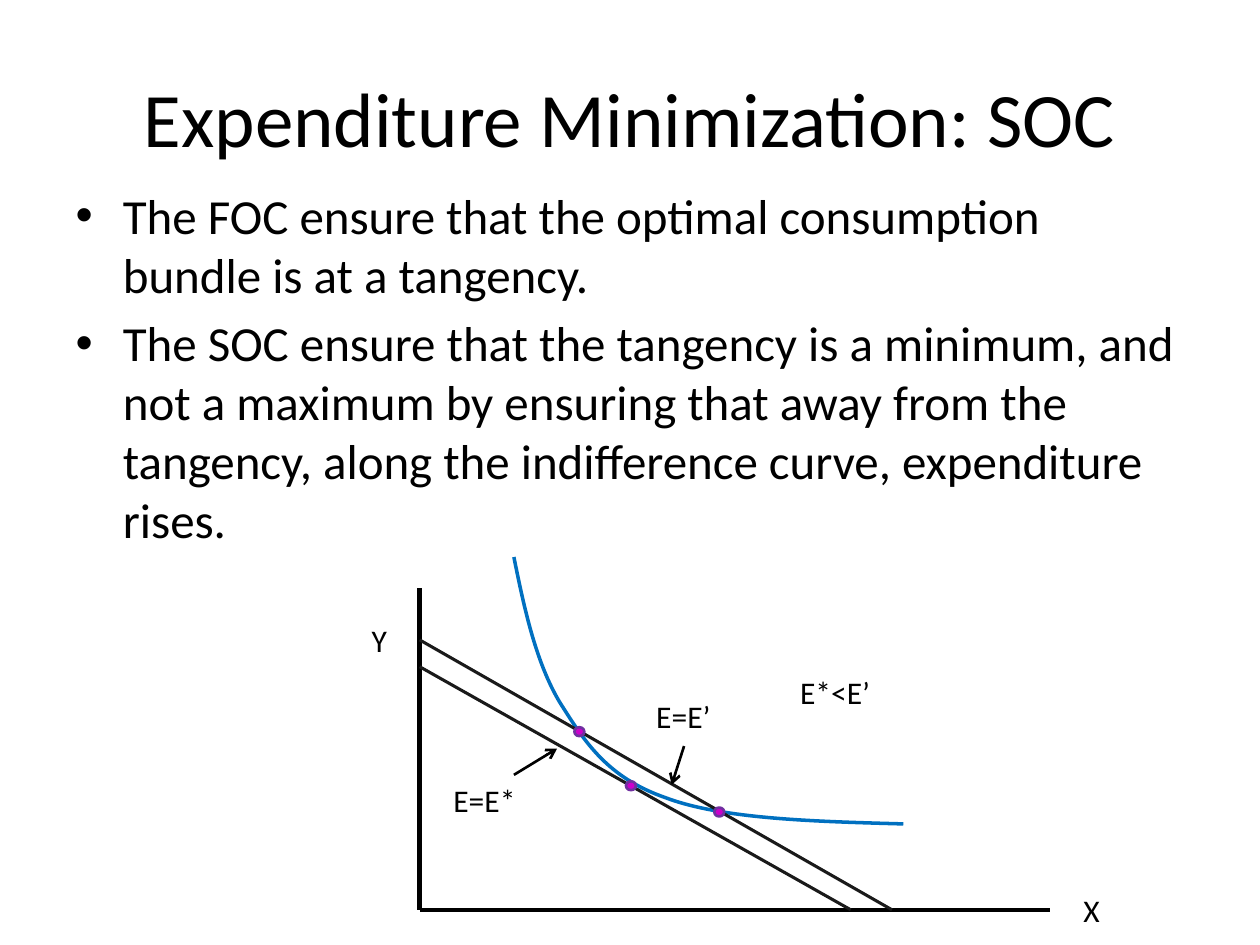
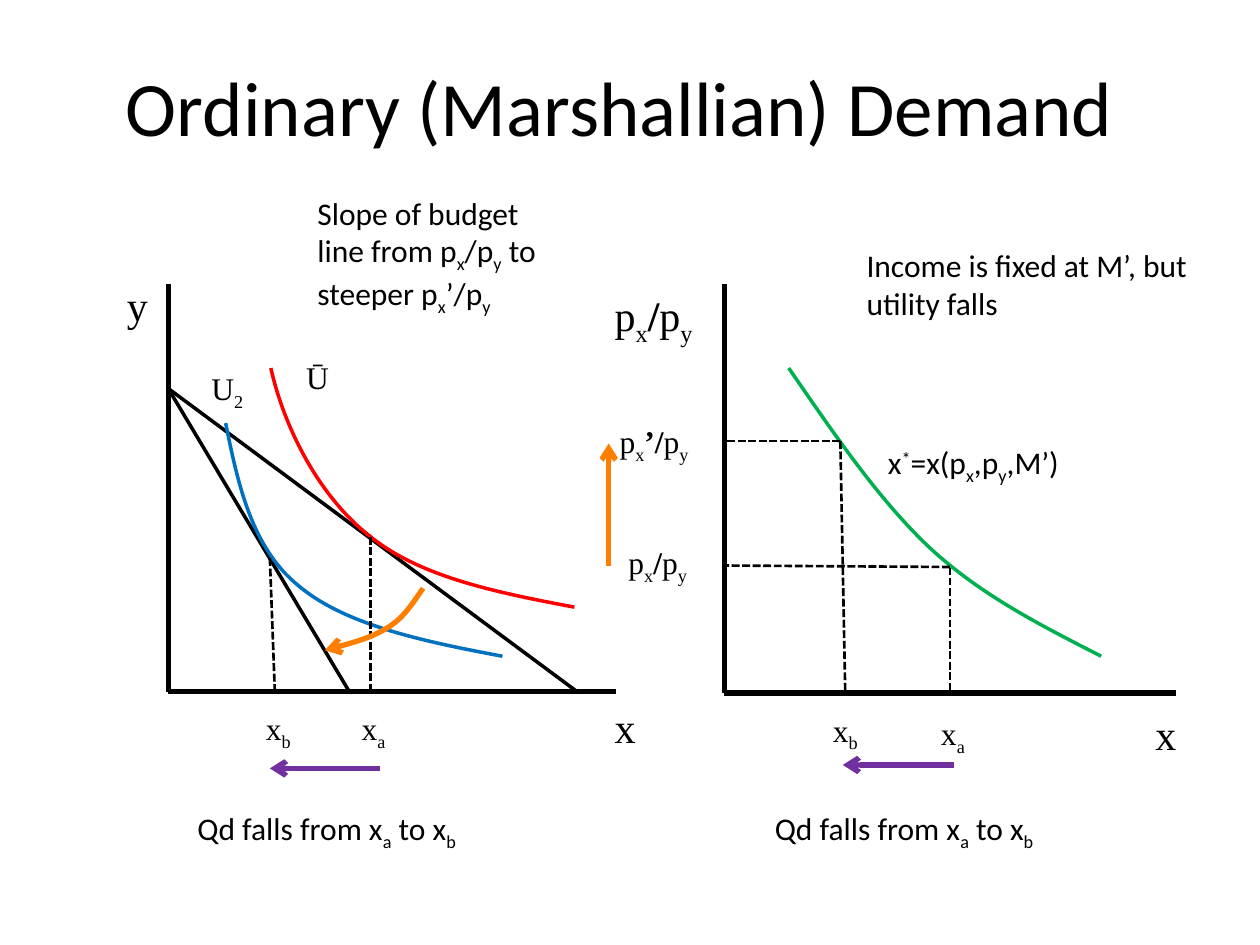
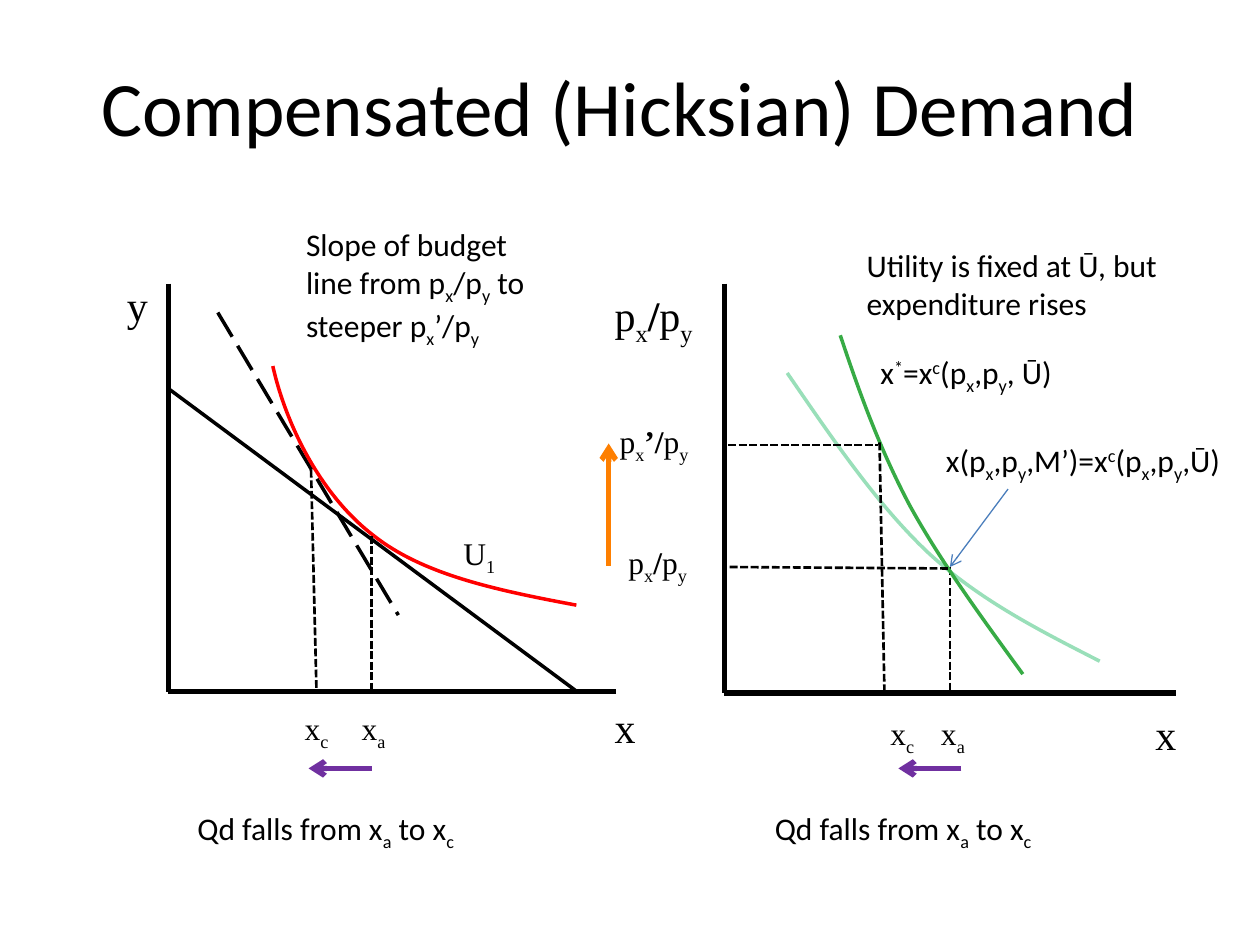
"""Build three slides on expenditure minimization and consumer demand."""
from dataclasses import dataclass, replace
from itertools import groupby

from lxml.etree import SubElement
from pptx import Presentation
from pptx.dml.color import RGBColor
from pptx.enum.dml import MSO_LINE
from pptx.enum.shapes import MSO_CONNECTOR, MSO_SHAPE
from pptx.enum.text import MSO_AUTO_SIZE, PP_ALIGN
from pptx.oxml.ns import qn
from pptx.util import Cm, Pt

BLACK = RGBColor(0x00, 0x00, 0x00)
CHARCOAL = RGBColor(0x1A, 0x1A, 0x1A)
BLUE = RGBColor(0x00, 0x70, 0xC0)
STEEL = RGBColor(0x4B, 0x7E, 0xBC)
RED = RGBColor(0xFF, 0x00, 0x00)
GREEN = RGBColor(0x00, 0xB0, 0x50)
LEAF = RGBColor(0x37, 0xAB, 0x45)
ORANGE = RGBColor(0xFE, 0x7F, 0x00)
PURPLE = RGBColor(0x70, 0x30, 0xA0)
MAGENTA = RGBColor(0xCC, 0x00, 0xCC)

SANS = "Calibri"
SERIF = "Times New Roman"
MARKS = "_^~"
BASELINES = {"_": "-25000", "^": "30000"}

Point = tuple[float, float]
Box = tuple[float, float, float, float]


@dataclass(frozen=True)
class Stroke:
    """Look of a line; opacity is a percentage."""
    color: RGBColor
    width: float
    dash: MSO_LINE | None = None
    arrow: bool = False
    opacity: int = 100


@dataclass(frozen=True)
class Line:
    """Straight line between two points in centimetres."""
    start: Point
    end: Point
    stroke: Stroke


@dataclass(frozen=True)
class Curve:
    """Chain of cubic Bézier segments in centimetres."""
    points: tuple[Point, ...]
    stroke: Stroke

    def shifted(self, right: float, down: float) -> "Curve":
        """Return the same curve moved by the given distances."""
        return replace(self, points=tuple((x + right, y + down) for x, y in self.points))


@dataclass(frozen=True)
class Label:
    """Text in which _, ^ and ~ lower, raise or embolden the next character."""
    text: str
    left: float
    top: float
    width: float
    height: float = 1.02
    font: str = SANS
    size: int = 18
    wrap: bool = False


AXIS = Stroke(BLACK, 3)
SMALL_AXIS = Stroke(BLACK, 2.5)
BUDGET = Stroke(BLACK, 2)
EXPENDITURE = Stroke(CHARCOAL, 1.75)
GUIDE = Stroke(BLACK, 1.5, MSO_LINE.SQUARE_DOT)
POINTER = Stroke(BLACK, 1.5, arrow=True)
PRICE_CHANGE = Stroke(ORANGE, 3, arrow=True)
QUANTITY_CHANGE = Stroke(PURPLE, 3, arrow=True)

FIXED_UTILITY = Curve(
    ((5.46, 7.42), (5.74, 8.66), (6.45, 10.03), (7.47, 10.82),
     (8.48, 11.63), (9.98, 11.94), (11.58, 12.24)), Stroke(RED, 2))
ORDINARY_DEMAND = Curve(
    ((15.9, 7.42), (16.81, 8.74), (17.7, 10.06), (18.75, 11.05),
     (19.79, 12.01), (21.01, 12.62), (22.2, 13.23)), Stroke(GREEN, 2))


def symbol(text: str, left: float, top: float, width: float = 1.02) -> Label:
    """Return a small serif label."""
    return Label(text, left, top, width, font=SERIF)


def axis_name(text: str, left: float, top: float, width: float, wrap: bool = True) -> Label:
    """Return a large serif label."""
    return Label(text, left, top, width, 1.27, SERIF, 24, wrap)


def slope_note(left: float, top: float) -> Label:
    """Return the note on the slope of the budget line."""
    return Label("Slope of budget line from p_x/p_y to steeper p_x’/p_y",
                 left, top, 5.64, 2.57, wrap=True)


def quantity_notes(target: str) -> list[Label]:
    """Return the note on demanded quantity for both diagrams."""
    return [Label(f"Qd falls from x_a to x_{target}", left, 16.18, 6.73, wrap=True)
            for left in (3.73, 15.37)]


DEMAND_FRAME = [
    Line((3.39, 5.72), (3.39, 13.94), AXIS),
    Line((12.42, 13.94), (3.39, 13.94), AXIS),
    Line((14.6, 5.72), (14.6, 13.97), AXIS),
    Line((23.7, 13.97), (14.6, 13.97), AXIS),
    Line((3.39, 7.83), (11.63, 13.94), BUDGET),
    Line((19.15, 11.43), (19.15, 13.97), GUIDE),
    Line((12.27, 11.4), (12.27, 8.94), PRICE_CHANGE),
    axis_name("y", 2.31, 5.51, 0.94, wrap=False),
    axis_name("x", 12.14, 14.02, 0.76),
    axis_name("x", 23.04, 14.15, 0.97),
    axis_name("p_x~/p_y", 12.14, 5.72, 2.46),
    replace(symbol("p_x~/p_y", 12.42, 10.82, 1.93), wrap=True),
    replace(symbol("p_x~’~/p_y", 12.24, 8.38, 2.11), wrap=True),
    symbol("x_a", 7.04, 14.17),
    symbol("x_a", 18.72, 14.27),
]

MINIMIZATION = [
    Line((8.46, 11.86), (8.46, 18.34), SMALL_AXIS),
    Line((8.46, 18.34), (21.16, 18.34), SMALL_AXIS),
    Line((8.46, 13.44), (17.15, 18.34), EXPENDITURE),
    Curve(((10.36, 11.23), (10.57, 12.27), (10.8, 13.34), (11.28, 14.15),
           (11.79, 14.96), (12.24, 15.67), (13.41, 16.08),
           (14.55, 16.51), (16.38, 16.56), (18.21, 16.61)), Stroke(BLUE, 2)),
    Line((8.46, 12.9), (17.98, 18.34), EXPENDITURE),
    Line((10.36, 15.62), (11.23, 15.09), POINTER),
    Line((13.79, 15.04), (13.54, 15.82), POINTER),
    Label("X", 21.59, 17.83, 0.89, wrap=True),
    Label("Y", 7.24, 12.4, 0.89, wrap=True),
    Label("E=E*", 8.89, 15.62, 1.78),
    Label("E=E’", 12.98, 13.92, 1.63),
    Label("E*<E’", 15.88, 13.44, 1.93),
]
CROSSINGS = [(11.58, 14.66), (12.62, 15.75), (14.4, 16.28)]

MARSHALLIAN = [
    Line((3.39, 7.83), (7.04, 13.94), BUDGET),
    Curve(((4.55, 8.53), (4.8, 9.78), (5.08, 11.05), (6.02, 11.81),
           (6.96, 12.6), (8.53, 12.93), (10.13, 13.23)), Stroke(BLUE, 2)),
    FIXED_UTILITY,
    ORDINARY_DEMAND,
    Line((7.47, 10.82), (7.47, 13.92), GUIDE),
    Line((5.44, 11.25), (5.54, 13.94), GUIDE),
    Line((16.94, 8.89), (17.04, 14.02), GUIDE),
    Line((16.94, 8.89), (14.6, 8.89), GUIDE),
    Line((19.15, 11.43), (14.6, 11.4), GUIDE),
    Curve(((8.53, 11.86), (8.33, 12.14), (8.15, 12.45), (7.82, 12.65),
           (7.49, 12.85), (7.04, 12.98), (6.55, 13.11)), PRICE_CHANGE),
    Line((19.23, 15.42), (16.99, 15.42), QUANTITY_CHANGE),
    Line((7.67, 15.49), (5.44, 15.49), QUANTITY_CHANGE),
    symbol("x_b", 5.11, 14.17),
    symbol("x_b", 16.54, 14.2),
    symbol("Ū", 5.92, 7.09, 0.97),
    symbol("U_2", 4.01, 7.32, 1.19),
    Label("x^*=x(p_x,p_y,M’)", 17.65, 8.81, 4.04),
    slope_note(6.15, 3.78),
    Label("Income is fixed at M’, but\nutility falls", 17.22, 4.83, 7.42, 1.8),
    *quantity_notes("b"),
]

HICKSIAN = [
    Line((4.39, 6.3), (8.03, 12.4), replace(BUDGET, dash=MSO_LINE.LONG_DASH)),
    FIXED_UTILITY.shifted(0.04, -0.04),
    replace(ORDINARY_DEMAND.shifted(-0.03, 0.1), stroke=Stroke(GREEN, 2, opacity=40)),
    Curve(((16.94, 6.76), (17.32, 7.9), (17.73, 9.04), (18.34, 10.19),
           (18.95, 11.3), (19.79, 12.45), (20.62, 13.59)), Stroke(LEAF, 2)),
    Line((7.49, 10.8), (7.49, 13.89), GUIDE),
    Line((6.27, 9.47), (6.38, 13.94), GUIDE),
    Line((17.73, 8.92), (17.83, 13.94), GUIDE),
    Line((14.68, 8.97), (17.7, 8.97), GUIDE),
    Line((14.71, 11.43), (19.15, 11.46), GUIDE),
    Line((7.49, 15.49), (6.22, 15.49), QUANTITY_CHANGE),
    Line((19.38, 15.49), (18.11, 15.49), QUANTITY_CHANGE),
    Line((20.32, 9.86), (19.15, 11.43), Stroke(STEEL, 0.75, arrow=True)),
    symbol("x_c", 5.89, 14.17),
    symbol("x_c", 17.7, 14.27),
    symbol("U_1", 9.09, 10.64, 1.19),
    Label("x^*=x^c(p_x,p_y, Ū)", 17.5, 6.99, 4.11),
    Label("x(p_x,p_y,M’)=x^c(p_x,p_y,Ū)", 18.82, 8.76, 6.1, 1.8),
    slope_note(5.92, 4.42),
    Label("Utility is fixed at Ū, but\nexpenditure rises", 17.22, 4.83, 6.45, 1.8),
    *quantity_notes("c"),
]


def apply_stroke(shape, stroke: Stroke) -> None:
    """Give the outline of a shape or connector the stroke's look."""
    shape.line.color.rgb = stroke.color
    shape.line.width = Pt(stroke.width)
    if stroke.dash is not None:
        shape.line.dash_style = stroke.dash
    outline = shape._element.spPr.find(qn("a:ln"))
    if stroke.opacity < 100:
        color = outline.find(".//" + qn("a:srgbClr"))
        SubElement(color, qn("a:alpha"), val=str(stroke.opacity * 1000))
    if stroke.arrow:
        SubElement(outline, qn("a:tailEnd"), type="arrow")


def draw_line(slide, line: Line) -> None:
    """Draw a straight connector without a shadow."""
    ends = [Cm(value) for value in line.start + line.end]
    connector = slide.shapes.add_connector(MSO_CONNECTOR.STRAIGHT, *ends)
    apply_stroke(connector, line.stroke)
    SubElement(connector._element.spPr, qn("a:effectLst"))


def draw_curve(slide, curve: Curve) -> None:
    """Draw a freeform and join each three of its segments into a Bézier."""
    start, *others = [(Cm(x), Cm(y)) for x, y in curve.points]
    builder = slide.shapes.build_freeform(*start)
    builder.add_line_segments(others, close=False)
    shape = builder.convert_to_shape()
    shape.fill.background()
    shape.shadow.inherit = False
    apply_stroke(shape, curve.stroke)
    outline = shape._element.find(".//" + qn("a:path"))
    segments = outline.findall(qn("a:lnTo"))
    for first in range(0, len(segments), 3):
        bezier = SubElement(outline, qn("a:cubicBezTo"))
        for segment in segments[first:first + 3]:
            bezier.append(segment[0])
            outline.remove(segment)


def split_marks(text: str) -> list[tuple[str, str]]:
    """Pair every visible character with the mark before it."""
    pairs, mark = [], ""
    for character in text:
        if character in MARKS:
            mark = character
        else:
            pairs.append((mark, character))
            mark = ""
    return pairs


def draw_label(slide, label: Label) -> None:
    """Draw a text box with lowered, raised and bold characters."""
    box = slide.shapes.add_textbox(
        Cm(label.left), Cm(label.top), Cm(label.width), Cm(label.height))
    frame = box.text_frame
    frame.word_wrap = label.wrap
    frame.auto_size = MSO_AUTO_SIZE.SHAPE_TO_FIT_TEXT
    for number, text in enumerate(label.text.split("\n")):
        paragraph = frame.add_paragraph() if number else frame.paragraphs[0]
        paragraph.font.name = label.font
        paragraph.font.size = Pt(label.size)
        paragraph.font.color.rgb = BLACK
        for mark, pairs in groupby(split_marks(text), key=lambda pair: pair[0]):
            run = paragraph.add_run()
            run.text = "".join(character for _, character in pairs)
            if mark in BASELINES:
                run._r.get_or_add_rPr().set("baseline", BASELINES[mark])
            elif mark == "~":
                run.font.bold = True


def draw_crossing(slide, corner: Point) -> None:
    """Draw a dot where an expenditure line meets the curve."""
    dot = slide.shapes.add_shape(
        MSO_SHAPE.OVAL, Cm(corner[0]), Cm(corner[1]), Cm(0.2), Cm(0.18))
    dot.shadow.inherit = False
    dot.fill.solid()
    dot.fill.fore_color.rgb = MAGENTA
    apply_stroke(dot, Stroke(PURPLE, 1.5))


def draw_diagram(slide, elements: list[Line | Curve | Label]) -> None:
    """Draw every element with the function for its type."""
    painters = {Line: draw_line, Curve: draw_curve, Label: draw_label}
    for element in elements:
        painters[type(element)](slide, element)


def fill_placeholder(placeholder, box: Box, texts: list[str], size: int) -> None:
    """Move a placeholder and write its paragraphs."""
    placeholder.left, placeholder.top, placeholder.width, placeholder.height = map(Cm, box)
    placeholder.text_frame.text = "\n".join(texts)
    for paragraph in placeholder.text_frame.paragraphs:
        paragraph.font.name = SANS
        paragraph.font.size = Pt(size)
        paragraph.font.color.rgb = BLACK


def add_titled_slide(presentation, layout: int, title: str, box: Box):
    """Add a slide with a centred title."""
    slide = presentation.slides.add_slide(presentation.slide_layouts[layout])
    fill_placeholder(slide.shapes.title, box, [title], 44)
    slide.shapes.title.text_frame.paragraphs[0].alignment = PP_ALIGN.CENTER
    return slide


def main() -> None:
    """Build and save the presentation."""
    presentation = Presentation()
    presentation.slide_width, presentation.slide_height = Cm(25.4), Cm(19.05)

    slide = add_titled_slide(presentation, 1, "Expenditure Minimization: SOC",
                             (1.27, 0.76, 22.86, 3.18))
    fill_placeholder(slide.placeholders[1], (1.27, 3.61, 22.86, 13.41), [
        "The FOC ensure that the optimal consumption bundle is at a tangency.",
        "The SOC ensure that the tangency is a minimum, and not a maximum by ensuring "
        "that away from the tangency, along the indifference curve, expenditure rises.",
    ], 28)
    draw_diagram(slide, MINIMIZATION)
    for corner in CROSSINGS:
        draw_crossing(slide, corner)

    for title, elements in (("Ordinary (Marshallian) Demand", MARSHALLIAN),
                            ("Compensated (Hicksian) Demand", HICKSIAN)):
        slide = add_titled_slide(presentation, 5, title, (1.47, 0.64, 22.05, 2.97))
        draw_diagram(slide, DEMAND_FRAME + elements)

    presentation.save("out.pptx")


if __name__ == "__main__":
    main()
